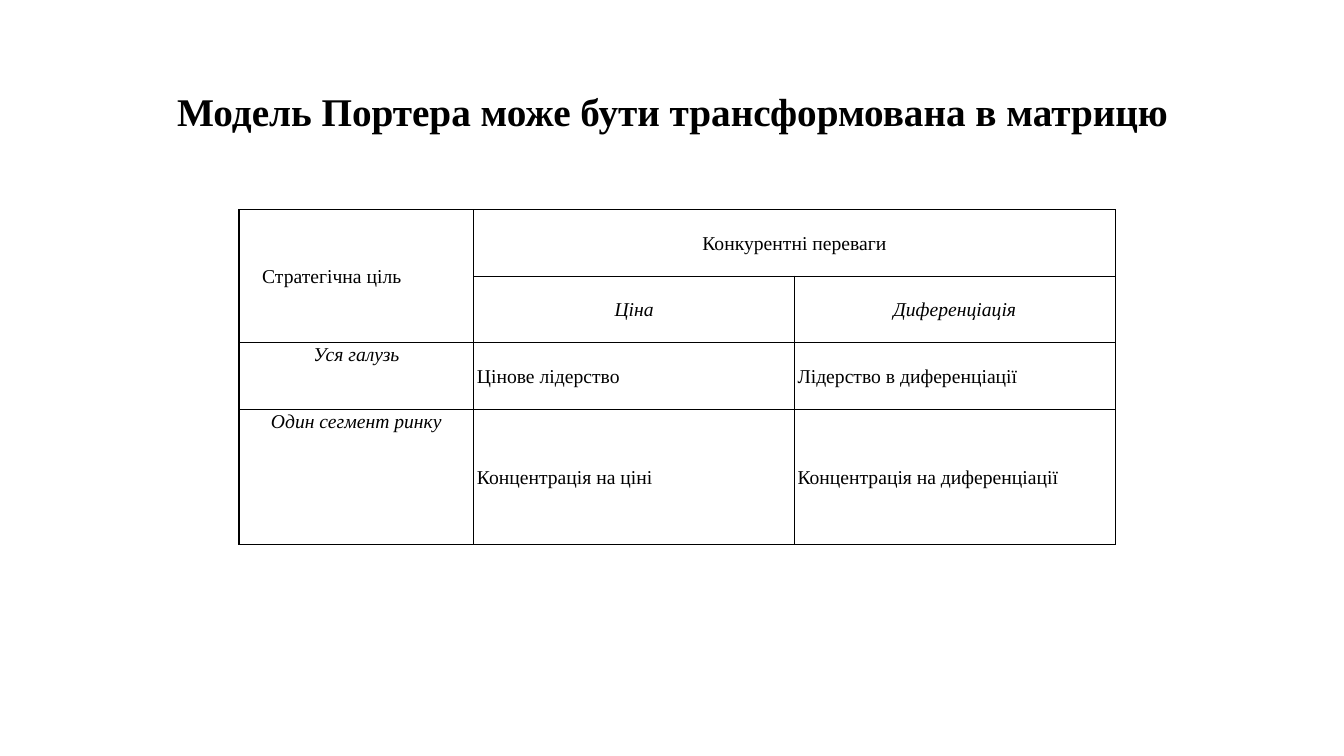
from lxml import etree
from pptx import Presentation
from pptx.dml.color import RGBColor
from pptx.enum.text import MSO_ANCHOR as Anchor, PP_ALIGN as Align
from pptx.oxml.ns import qn
from pptx.util import Inches, Pt

TITLE = "Модель Портера може бути трансформована в матрицю"
CENTER, JUSTIFY, LEFT = Align.CENTER, Align.JUSTIFY, Align.LEFT
MIDDLE, TOP = Anchor.MIDDLE, Anchor.TOP

# Each cell: text, alignment, vertical anchor, italic; None is covered by a merge
MATRIX = [
    [("Стратегічна ціль", JUSTIFY, MIDDLE, False),
     ("Конкурентні переваги", CENTER, MIDDLE, False), None],
    [None, ("Ціна", CENTER, MIDDLE, True),
     ("Диференціація", CENTER, MIDDLE, True)],
    [("Уся галузь", CENTER, TOP, True),
     ("Цінове лідерство", JUSTIFY, MIDDLE, False),
     ("Лідерство в диференціації", JUSTIFY, MIDDLE, False)],
    [("Один сегмент ринку", CENTER, TOP, True),
     ("Концентрація на ціні", LEFT, MIDDLE, False),
     ("Концентрація на диференціації", LEFT, MIDDLE, False)],
]
MERGES = [((0, 0), (1, 0)), ((0, 1), (0, 2))]
COLUMN_WIDTHS = [2.33, 3.18, 3.18]
ROW_HEIGHTS = [0.66, 0.66, 0.66, 1.34]
GOAL_INDENT = 0.2

FONT = "Times New Roman"
BLACK = RGBColor(0, 0, 0)
WHITE = RGBColor(255, 255, 255)
CELL_MARGINS = {"margin_left": Inches(0.03), "margin_right": Inches(0.03),
                "margin_top": 0, "margin_bottom": 0}


def apply(target, values):
    for name, value in values.items():
        setattr(target, name, value)


def write(paragraph, text, align, spacing, **font_values):
    paragraph.text = text
    apply(paragraph, {"alignment": align, "line_spacing": spacing})
    font = paragraph.runs[0].font
    apply(font, {"name": FONT, **font_values})
    font.color.rgb = BLACK


def add_borders(cell):
    """Draw thin black lines on all four sides of a cell."""
    properties = cell._tc.get_or_add_tcPr()
    for position, side in enumerate(("a:lnL", "a:lnR", "a:lnT", "a:lnB")):
        line = etree.Element(qn(side), w=str(Pt(1)))
        fill = etree.SubElement(line, qn("a:solidFill"))
        etree.SubElement(fill, qn("a:srgbClr"), val=str(BLACK))
        properties.insert(position, line)


def add_title(slide):
    box = slide.shapes.add_textbox(Inches(0.92), Inches(0.4), Inches(11.5), Inches(1.45))
    apply(box.text_frame, {"word_wrap": True, "vertical_anchor": MIDDLE})
    write(box.text_frame.paragraphs[0], TITLE, CENTER, 0.9, size=Pt(28), bold=True)


def add_matrix(slide):
    table = slide.shapes.add_table(
        len(ROW_HEIGHTS), len(COLUMN_WIDTHS), Inches(2.37), Inches(2.08),
        Inches(sum(COLUMN_WIDTHS)), Inches(sum(ROW_HEIGHTS))).table
    apply(table, {"first_row": False, "horz_banding": False})
    for column, width in zip(table.columns, COLUMN_WIDTHS):
        column.width = Inches(width)
    for row, height in zip(table.rows, ROW_HEIGHTS):
        row.height = Inches(height)
    for first, last in MERGES:
        table.cell(*first).merge(table.cell(*last))

    for row, entries in enumerate(MATRIX):
        for column, entry in enumerate(entries):
            cell = table.cell(row, column)
            cell.fill.solid()
            cell.fill.fore_color.rgb = WHITE
            add_borders(cell)
            if entry:
                text, align, anchor, italic = entry
                apply(cell, {**CELL_MARGINS, "vertical_anchor": anchor})
                write(cell.text_frame.paragraphs[0], text, align, 1.07,
                      size=Pt(14), bold=False, italic=italic)

    goal = table.cell(0, 0).text_frame.paragraphs[0]
    goal._p.get_or_add_pPr().set("indent", str(Inches(GOAL_INDENT)))


def main():
    deck = Presentation()
    apply(deck, {"slide_width": Inches(13.33), "slide_height": Inches(7.5)})
    slide = deck.slides.add_slide(deck.slide_layouts[6])
    add_title(slide)
    add_matrix(slide)
    deck.save("out.pptx")


if __name__ == "__main__":
    main()
